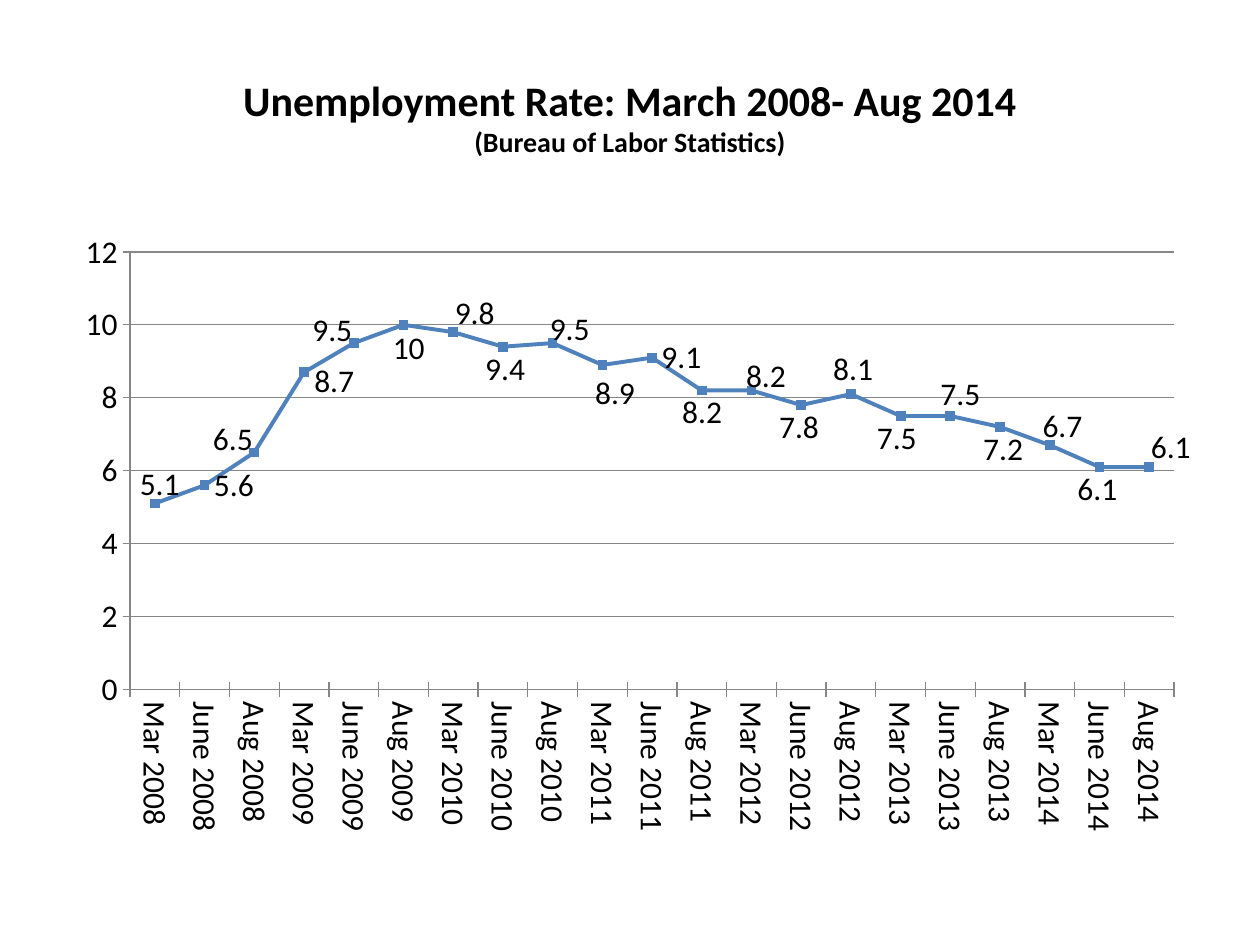
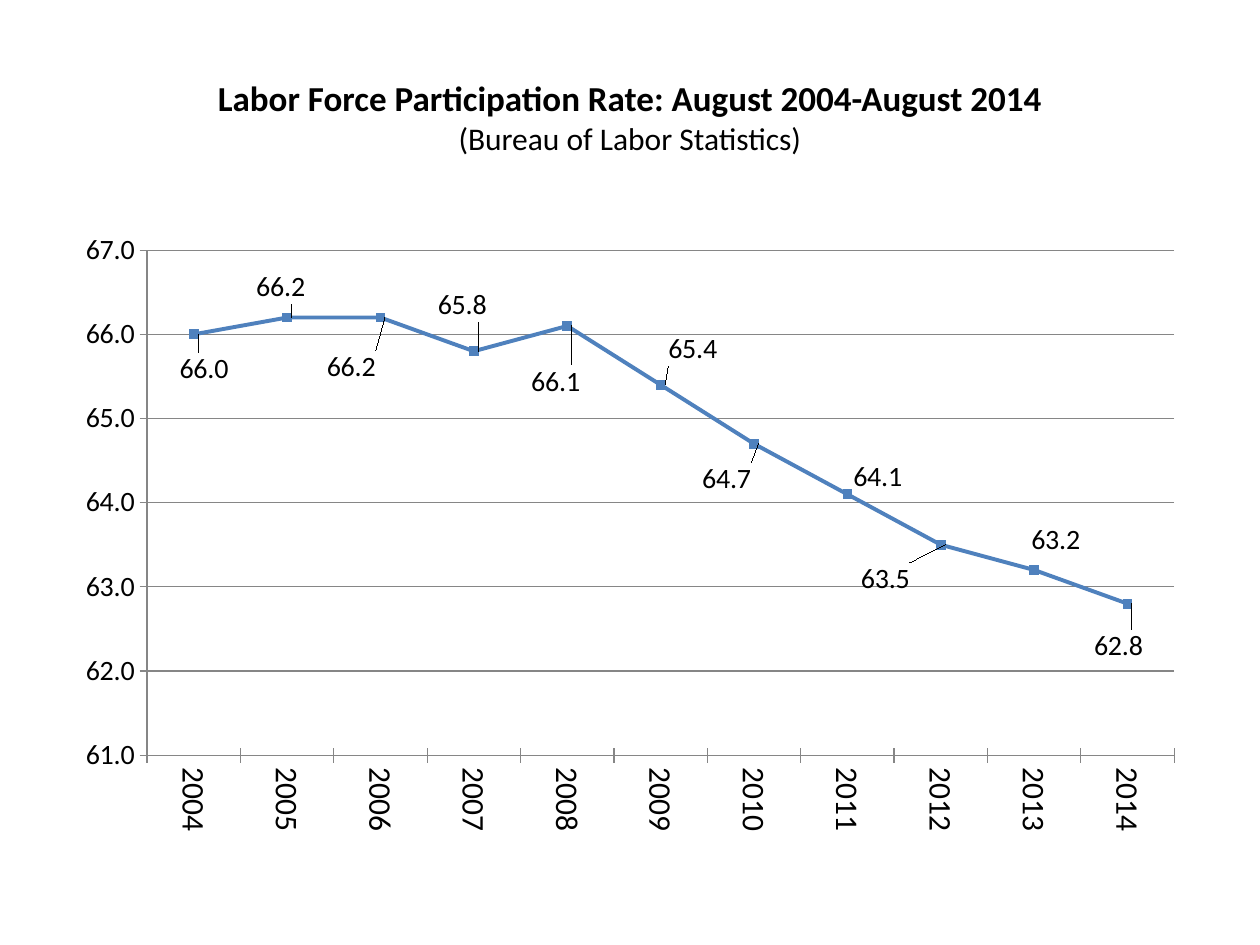
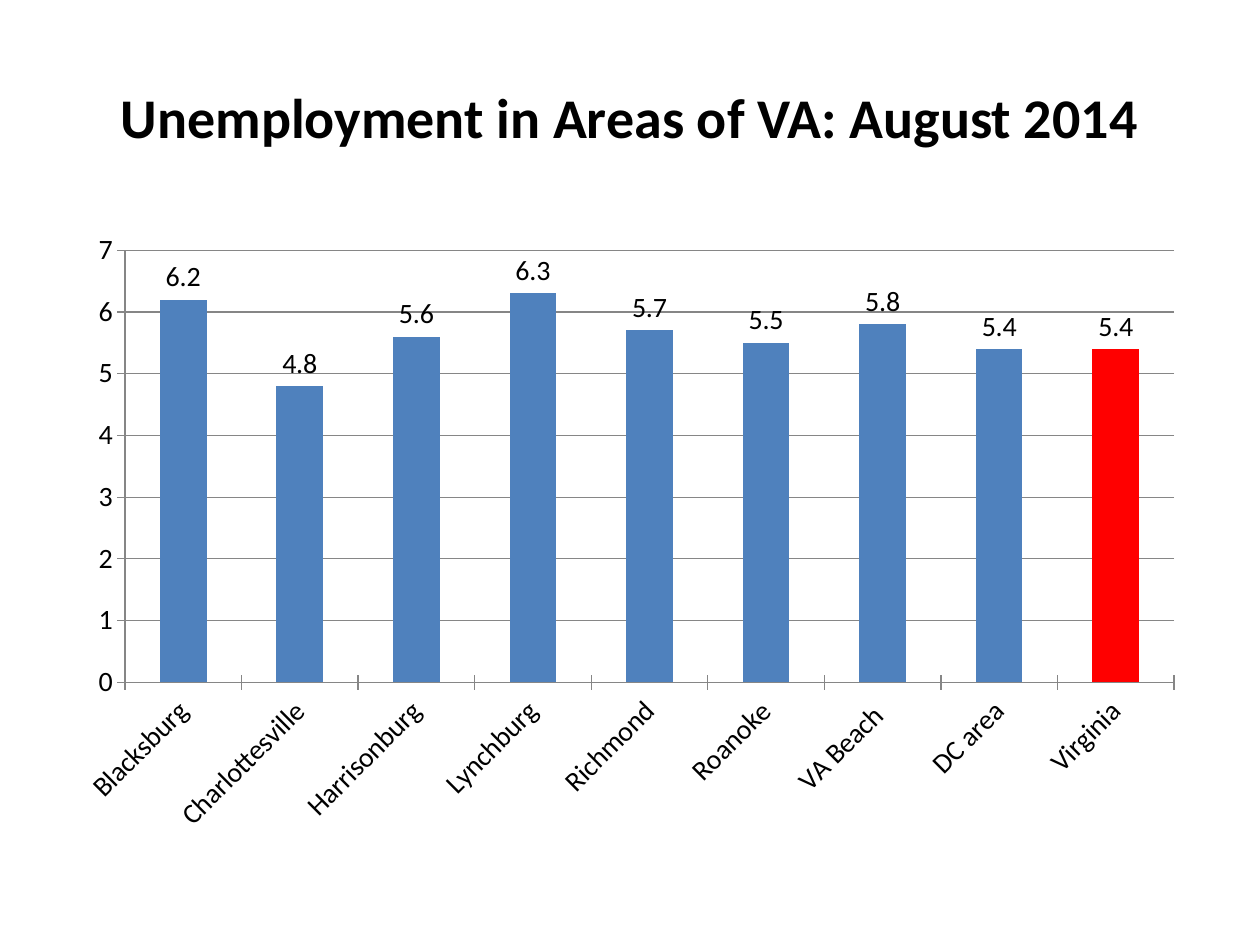
from dataclasses import dataclass, field

from lxml.etree import SubElement
from pptx import Presentation
from pptx.chart.data import CategoryChartData
from pptx.dml.color import RGBColor
from pptx.enum.chart import (XL_CHART_TYPE, XL_LABEL_POSITION, XL_MARKER_STYLE,
                             XL_TICK_MARK)
from pptx.enum.text import MSO_ANCHOR, PP_ALIGN
from pptx.oxml.ns import qn
from pptx.util import Pt


@dataclass(frozen=True)
class Theme:
    font: str = "Calibri"
    text: RGBColor = RGBColor(0, 0, 0)
    series: RGBColor = RGBColor(0x4F, 0x81, 0xBD)
    highlight: RGBColor = RGBColor(0xFF, 0, 0)
    axis: RGBColor = RGBColor(0x86, 0x86, 0x86)
    axis_width: float = 0.75
    line_width: float = 2.25
    marker_size: int = 5


@dataclass
class ChartPage:
    title: list  # (text, size, bold) for each line
    values: dict
    kind: XL_CHART_TYPE
    plot_left: float
    plot_top: float
    plot_height: float
    value_range: tuple  # minimum, maximum, step
    size: int
    category_size: int
    rotation: int  # degrees, clockwise
    number_format: str = "General"
    label_shifts: dict = field(default_factory=dict)  # points from the default spot
    highlights: tuple = ()


THEME = Theme()
SLIDE_SIZE = (720, 540)
TITLE_BOX = (36, 21.6, 648, 90)
CHART_BOX = (36, 126, 648, 356.4)
PLOT_RIGHT = 635

MONTHS = ("Mar 2008,June 2008,Aug 2008,Mar 2009,June 2009,Aug 2009,Mar 2010,"
          "June 2010,Aug 2010,Mar 2011,June 2011,Aug 2011,Mar 2012,June 2012,"
          "Aug 2012,Mar 2013,June 2013,Aug 2013,Mar 2014,June 2014,Aug 2014").split(",")
RATES = [5.1, 5.6, 6.5, 8.7, 9.5, 10, 9.8, 9.4, 9.5, 8.9, 9.1, 8.2, 8.2, 7.8,
         8.1, 7.5, 7.5, 7.2, 6.7, 6.1, 6.1]
PARTICIPATION = [66, 66.2, 66.2, 65.8, 66.1, 65.4, 64.7, 64.1, 63.5, 63.2, 62.8]

PAGES = [
    ChartPage(
        title=[("Unemployment Rate: March 2008- Aug 2014", 24, True),
               ("(Bureau of Labor Statistics)", 16, True)],
        values=dict(zip(MONTHS, RATES)),
        kind=XL_CHART_TYPE.LINE_MARKERS,
        plot_left=38.3, plot_top=18, plot_height=250,
        value_range=(0, 12, 2), size=18, category_size=18, rotation=90,
        label_shifts={
            0: (-14, -11), 2: (-29, -7.5), 3: (0.5, 5), 4: (-29, -7.5),
            5: (-11.5, 13.5), 6: (-4.5, -11), 7: (-15.5, 13), 8: (-7, -8),
            9: (-9.5, 16), 11: (-16.5, 12.5), 12: (-8.5, -8), 13: (-18, 12.5),
            14: (-15.5, -14), 15: (-19, 13), 16: (-11, -12.5), 17: (-15, 13),
            18: (-9.5, -11), 19: (-18, 13), 20: (-4.5, -11)}),
    ChartPage(
        title=[("Labor Force Participation Rate: August 2004-August 2014", 20, True),
               ("(Bureau of Labor Statistics)", 18, False)],
        values={str(2004 + i): v for i, v in enumerate(PARTICIPATION)},
        kind=XL_CHART_TYPE.LINE_MARKERS,
        plot_left=48, plot_top=17, plot_height=288.6,
        value_range=(61, 67, 1), size=16, category_size=18, rotation=90,
        number_format="0.0",
        label_shifts=dict(enumerate([
            (-13.5, 20), (-23, -17.5), (-36, 28.5), (-26, -26), (-26, 32),
            (-1, -20.5), (-35, 20.5), (-2, -9.5), (-51, 20), (-7, -17),
            (-24.5, 24.5)]))),
    ChartPage(
        title=[("Unemployment in Areas of VA: August 2014", 32, True)],
        values={"Blacksburg": 6.2, "Charlottesville": 4.8, "Harrisonburg": 5.6,
                "Lynchburg": 6.3, "Richmond": 5.7, "Roanoke": 5.5,
                "VA Beach ": 5.8, "DC area": 5.4, "Virginia": 5.4},
        kind=XL_CHART_TYPE.COLUMN_CLUSTERED,
        plot_left=35.4, plot_top=17, plot_height=247,
        value_range=(0, 7, 1), size=16, category_size=16, rotation=-45,
        highlights=(8,)),
]


def set_attrs(obj, **values):
    for name, value in values.items():
        setattr(obj, name, value)


def style_font(font, size, bold=False):
    set_attrs(font, name=THEME.font, size=Pt(size), bold=bold)
    font.color.rgb = THEME.text


def style_line(line, color, width):
    line.color.rgb = color
    line.width = Pt(width)


def fill_solid(fill, color):
    fill.solid()
    fill.fore_color.rgb = color


def make_layout(**values):
    """Return the children of a manual chart layout, as a c:manualLayout parent."""
    layout = SubElement(SubElement(THEME_ROOT, qn("c:layout")), qn("c:manualLayout"))
    for name, value in values.items():
        SubElement(layout, qn(f"c:{name}")).set("val", str(value))
    return layout.getparent()


def add_title(slide, box, lines):
    tf = slide.shapes.add_textbox(*map(Pt, box)).text_frame
    set_attrs(tf, word_wrap=True, vertical_anchor=MSO_ANCHOR.MIDDLE)
    p = tf.paragraphs[0]
    p.alignment = PP_ALIGN.CENTER
    for i, (text, size, bold) in enumerate(lines):
        if i:
            p.add_line_break()
        r = p.add_run()
        r.text = text
        style_font(r.font, size, bold)


def place_plot(chart, box, page):
    """Fix the inner plot area at its distances from the chart's corner."""
    width, height = box[2:]
    plot_area = chart._chartSpace.chart.plotArea
    for old in plot_area.findall(qn("c:layout")):
        plot_area.remove(old)
    plot_area.insert(0, make_layout(
        layoutTarget="inner", xMode="edge", yMode="edge",
        x=round(page.plot_left / width, 4), y=round(page.plot_top / height, 4),
        w=round((PLOT_RIGHT - page.plot_left) / width, 4),
        h=round(page.plot_height / height, 4)))


def style_axes(chart, page):
    low, high, step = page.value_range
    set_attrs(chart.value_axis, minimum_scale=low, maximum_scale=high,
              major_unit=step, has_major_gridlines=True)
    style_line(chart.value_axis.major_gridlines.format.line, THEME.axis, THEME.axis_width)
    for axis, size in ((chart.value_axis, page.size),
                       (chart.category_axis, page.category_size)):
        axis.major_tick_mark = XL_TICK_MARK.CROSS
        style_line(axis.format.line, THEME.axis, THEME.axis_width)
        style_font(axis.tick_labels.font, size)
    set_attrs(chart.value_axis.tick_labels, number_format=page.number_format,
              number_format_is_linked=False)
    body = chart.category_axis._element.find(qn("c:txPr")).find(qn("a:bodyPr"))
    body.set("rot", str(page.rotation * 60000))
    body.set("vert", "horz")


def style_series(series, page):
    if page.kind == XL_CHART_TYPE.LINE_MARKERS:
        series.smooth = False
        style_line(series.format.line, THEME.series, THEME.line_width)
        set_attrs(series.marker, style=XL_MARKER_STYLE.SQUARE, size=THEME.marker_size)
        fill_solid(series.marker.format.fill, THEME.series)
        style_line(series.marker.format.line, THEME.series, THEME.axis_width)
    else:
        fill_solid(series.format.fill, THEME.series)
    for i in page.highlights:
        fill_solid(series.points[i].format.fill, THEME.highlight)


def add_labels(series, box, page):
    labels = series.data_labels
    labels.show_value = True
    style_font(labels.font, page.size)
    is_line = page.kind == XL_CHART_TYPE.LINE_MARKERS
    labels.position = XL_LABEL_POSITION.RIGHT if is_line else XL_LABEL_POSITION.OUTSIDE_END
    for i in page.label_shifts:
        label = series.points[i].data_label
        style_font(label.font, page.size)
        label.position = XL_LABEL_POSITION.RIGHT
    for item in labels._element.findall(qn("c:dLbl")):
        idx = item.find(qn("c:idx"))
        dx, dy = page.label_shifts[int(idx.get("val"))]
        idx.addnext(make_layout(x=round(dx / box[2], 4), y=round(dy / box[3], 4)))


def add_rate_chart(slide, box, page):
    data = CategoryChartData(number_format=page.number_format)
    data.categories = list(page.values)
    data.add_series("Series 1", list(page.values.values()))
    chart = slide.shapes.add_chart(page.kind, *map(Pt, box), data).chart
    set_attrs(chart, has_title=False, has_legend=False)
    style_font(chart.font, page.size)
    plot = chart.plots[0]
    plot.vary_by_categories = False
    if page.kind == XL_CHART_TYPE.COLUMN_CLUSTERED:
        plot.gap_width = 150
    place_plot(chart, box, page)
    style_axes(chart, page)
    style_series(plot.series[0], page)
    add_labels(plot.series[0], box, page)


prs = Presentation()
prs.slide_width, prs.slide_height = map(Pt, SLIDE_SIZE)
THEME_ROOT = prs.slide_layouts[6]._element.makeelement(qn("c:chart"))
for page in PAGES:
    slide = prs.slides.add_slide(prs.slide_layouts[6])
    add_title(slide, TITLE_BOX, page.title)
    add_rate_chart(slide, CHART_BOX, page)
prs.save("out.pptx")
